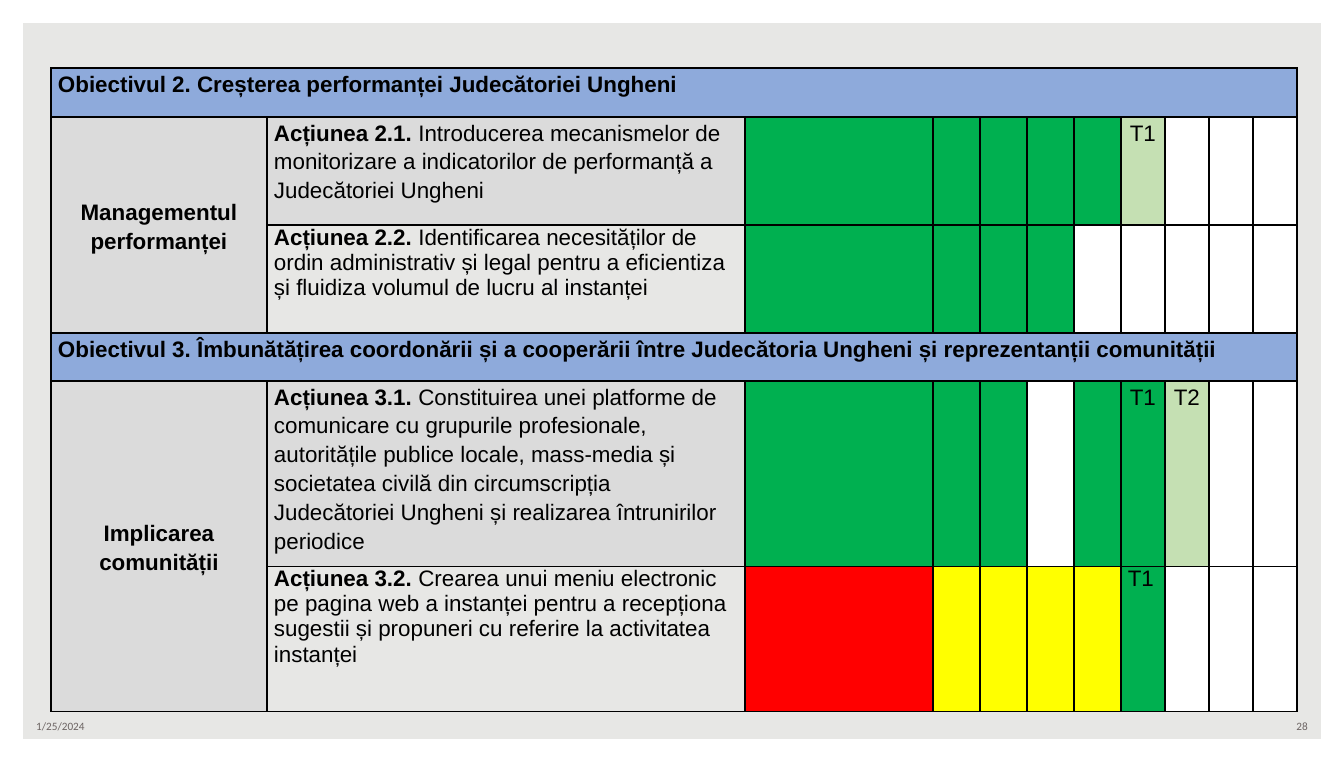
"""Build the slide with the action plan table of the Ungheni court."""
from dataclasses import dataclass

from lxml.etree import SubElement as Sub
from pptx import Presentation as Deck
from pptx.dml.color import RGBColor as Rgb
from pptx.enum.shapes import MSO_SHAPE as Form
from pptx.enum.text import MSO_ANCHOR as Anchor, PP_ALIGN as Align
from pptx.oxml.ns import qn
from pptx.table import Table, _Cell as Cell
from pptx.text.text import TextFrame as Frame
from pptx.util import Pt

SCALE = 6804
WIDE, HIGH = 1344, 762
COLS = [216, 478, 188] + [47] * 4 + [44] * 4
ROWS = [49, 108, 108, 48, 182, 145]


@dataclass(frozen=True)
class Theme:
    back: str = "E7E7E5"
    white: str = "FFFFFF"
    black: str = "000000"
    note: str = "6C6463"
    head: str = "8EAADB"
    gray: str = "DBDBDB"
    green: str = "00B050"
    light: str = "C5E0B3"
    red: str = "FF0000"
    yellow: str = "FFFF00"
    face: str = "Arial"
    small_face: str = "Calibri"
    body: int = 12
    small: int = 6


THEME = Theme()
FILLS = {"G": THEME.green, "L": THEME.light, "R": THEME.red,
         "Y": THEME.yellow, "W": THEME.white}


@dataclass(frozen=True)
class Task:
    """An action: its label, its wording, a colour code per period and marks by period."""
    label: str
    text: str
    code: str
    marks: dict[int, str]
    loose: bool


@dataclass(frozen=True)
class Goal:
    title: str
    area: str
    tasks: tuple[Task, ...]


GOALS = (
    Goal("Obiectivul 2. Creșterea performanței Judecătoriei Ungheni",
         "Managementul performanței", (
             Task("Acțiunea 2.1.",
                  "Introducerea mecanismelor de monitorizare a indicatorilor de "
                  "performanță a Judecătoriei Ungheni", "GGGGGLWWW", {5: "T1"}, True),
             Task("Acțiunea 2.2.",
                  "Identificarea necesităților de ordin administrativ și legal pentru a "
                  "eficientiza și fluidiza volumul de lucru al instanței",
                  "GGGGWWWWW", {}, False))),
    Goal("Obiectivul 3. Îmbunătățirea coordonării și a cooperării între Judecătoria "
         "Ungheni și reprezentanții comunității",
         "Implicarea comunității", (
             Task("Acțiunea 3.1.",
                  "Constituirea unei platforme de comunicare cu grupurile profesionale, "
                  "autoritățile publice locale, mass-media și societatea civilă din "
                  "circumscripția Judecătoriei Ungheni și realizarea întrunirilor periodice",
                  "GGGWGGLWW", {5: "T1", 6: "T2"}, True),
             Task("Acțiunea 3.2.",
                  "Crearea unui meniu electronic pe pagina web a instanței pentru a "
                  "recepționa sugestii și propuneri cu referire la activitatea instanței",
                  "RYYYYGWWW", {5: "T1"}, False))),
)


def px(size: int) -> int:
    """Turn px into EMU."""
    return size * SCALE


def put(frame: Frame, text: str, *, lead: str = "", bold: bool = False,
        align: Align = Align.LEFT, loose: bool = False, size: int = THEME.body,
        face: str = THEME.face, color: str = THEME.black) -> None:
    """Write one paragraph, with an optional bold lead before the text."""
    para = frame.paragraphs[0]
    para.alignment = align
    if loose:
        para.line_spacing = 1.15
        para.space_after = Pt(12)
    parts = [(lead + " ", True)] if lead else []
    for words, heavy in parts + [(text, bold)]:
        run = para.add_run()
        run.text = words
        run.font.size = Pt(size)
        run.font.name = face
        run.font.bold = heavy
        run.font.color.rgb = Rgb.from_string(color)


def rule(cell: Cell) -> None:
    """Draw thin black lines on all four sides of a cell."""
    props = cell._tc.get_or_add_tcPr()
    for side in ("lnL", "lnR", "lnT", "lnB"):
        line = Sub(props, qn(f"a:{side}"), w=str(Pt(1)))
        Sub(Sub(line, qn("a:solidFill")), qn("a:srgbClr"), val=THEME.black)


def paint(cell: Cell, color: str) -> None:
    """Fill a cell with one colour."""
    cell.fill.solid()
    cell.fill.fore_color.rgb = Rgb.from_string(color)


def draw_task(table: Table, row: int, task: Task) -> None:
    """Fill one row with an action and its periods."""
    cell = table.cell(row, 1)
    if task.loose:
        paint(cell, THEME.gray)
    put(cell.text_frame, task.text, lead=task.label, loose=task.loose)
    align = Align.CENTER if task.loose else Align.LEFT
    for step, key in enumerate(task.code):
        cell = table.cell(row, step + 2)
        paint(cell, FILLS[key])
        if step in task.marks:
            put(cell.text_frame, task.marks[step], align=align, loose=task.loose)


def draw_goal(table: Table, top: int, goal: Goal) -> None:
    """Fill the title row of a goal and the rows of its actions."""
    head = table.cell(top, 0)
    head.merge(table.cell(top, len(COLS) - 1))
    paint(head, THEME.head)
    put(head.text_frame, goal.title, bold=True, align=Align.JUSTIFY, loose=True)
    area = table.cell(top + 1, 0)
    area.merge(table.cell(top + len(goal.tasks), 0))
    area.vertical_anchor = Anchor.MIDDLE
    paint(area, THEME.gray)
    put(area.text_frame, goal.area, bold=True, align=Align.CENTER, loose=True)
    for row, task in enumerate(goal.tasks, top + 1):
        draw_task(table, row, task)


def main() -> None:
    """Build and save the deck."""
    deck = Deck()
    deck.slide_width, deck.slide_height = px(WIDE), px(HIGH)
    slide = deck.slides.add_slide(deck.slide_layouts[6])
    slide.background.fill.solid()
    slide.background.fill.fore_color.rgb = Rgb.from_string(THEME.back)

    edge = slide.shapes.add_shape(Form.FRAME, 0, 0, px(WIDE), px(HIGH))
    edge.adjustments[0] = 0.03
    edge.shadow.inherit = False
    edge.fill.solid()
    edge.fill.fore_color.rgb = Rgb.from_string(THEME.white)
    edge.line.fill.background()

    for left, text, align in ((23, "1/25/2024", Align.LEFT), (1008, "28", Align.RIGHT)):
        box = slide.shapes.add_textbox(px(left), px(713), px(313), px(27))
        box.text_frame.word_wrap = True
        box.text_frame.vertical_anchor = Anchor.MIDDLE
        put(box.text_frame, text, align=align, size=THEME.small,
            face=THEME.small_face, color=THEME.note)

    table = slide.shapes.add_table(len(ROWS), len(COLS), px(51), px(68),
                                   px(sum(COLS)), px(sum(ROWS))).table
    table.first_row = table.horz_banding = False
    for col, size in zip(table.columns, COLS):
        col.width = px(size)
    for row, size in zip(table.rows, ROWS):
        row.height = px(size)
    for cell in table.iter_cells():
        cell.margin_left = cell.margin_right = px(7)
        cell.margin_top = cell.margin_bottom = 0
        rule(cell)
        cell.fill.background()
    top = 0
    for goal in GOALS:
        draw_goal(table, top, goal)
        top += 1 + len(goal.tasks)
    deck.save("out.pptx")


if __name__ == "__main__":
    main()
